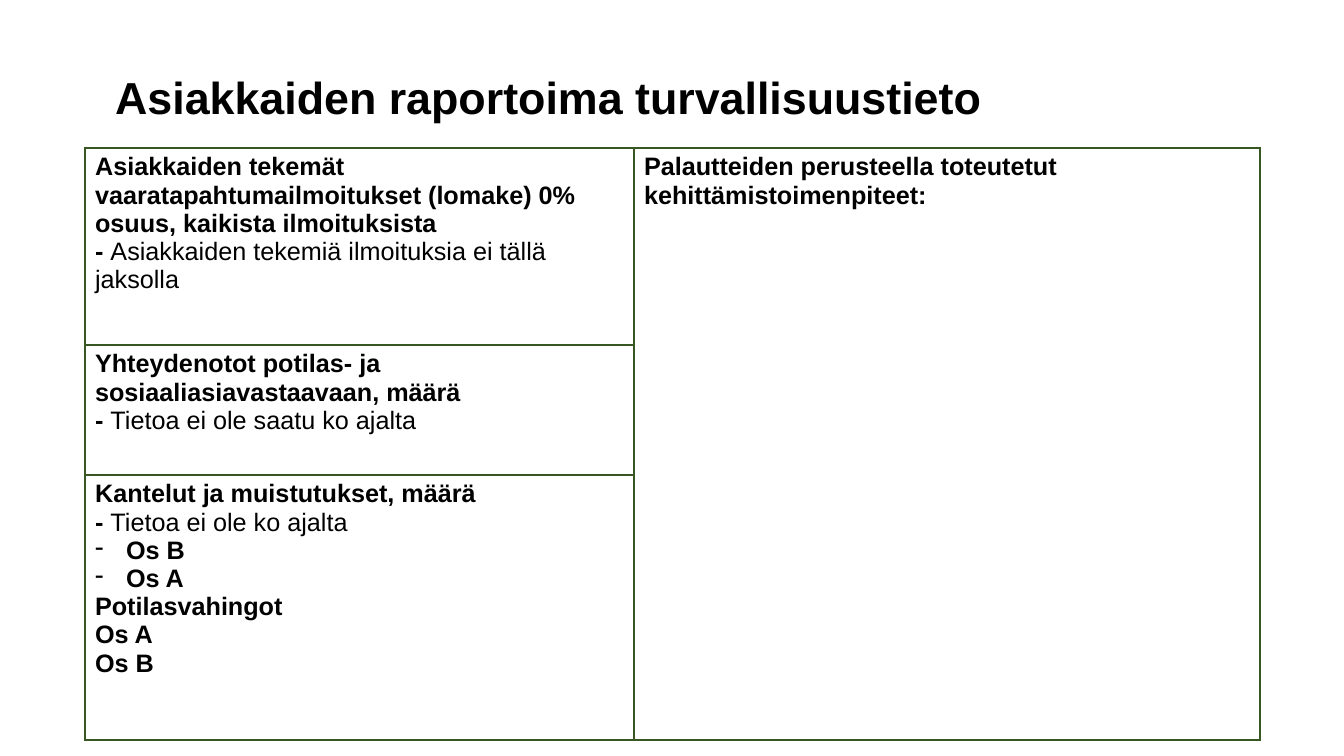
"""Build the slide on safety information reported by clients."""
from lxml import etree
from pptx import Presentation
from pptx import util as u
from pptx.dml import color
from pptx.enum import text
from pptx.oxml import ns

TITLE = "Asiakkaiden raportoima turvallisuustieto"
REPORTS = [
    [("Asiakkaiden tekemät vaaratapahtumailmoitukset (lomake) 0% osuus, kaikista ilmoituksista", ""),
     ("- ", "Asiakkaiden tekemiä ilmoituksia ei tällä jaksolla")],
    [("Yhteydenotot potilas- ja sosiaaliasiavastaavaan, määrä", ""),
     ("- ", "Tietoa ei ole saatu ko ajalta")],
    [("Kantelut ja muistutukset, määrä", ""),
     ("- ", "Tietoa ei ole ko ajalta"),
     ("• Os B", ""),
     ("• Os A", ""),
     ("Potilasvahingot", ""),
     ("Os A", ""),
     ("Os B", "")],
]
ACTIONS = [("Palautteiden perusteella toteutetut kehittämistoimenpiteet:", "")]

TITLE_BOX = (105, 27, 1019, 146)
TABLE_LEFT, TABLE_TOP = 85, 148
COLUMNS = [549, 626]
ROWS = [197, 130, 265]
INDENT = 31
BLACK, WHITE, GREEN = "000000", "FFFFFF", "385723"


def px(length):
    return u.Emu(round(length * 914400 / 100.8))


def rgb(value):
    return color.RGBColor.from_string(value)


def add_span(para, words, size=18, bold=True):
    span = para.add_run()
    span.text = words
    span.font.name = "Arial"
    span.font.size = u.Pt(size)
    span.font.bold = bold
    span.font.color.rgb = rgb(BLACK)


def add_dash(para):
    properties = para._p.get_or_add_pPr()
    properties.set("marL", str(px(INDENT)))
    properties.set("indent", str(-px(INDENT)))
    etree.SubElement(properties, ns.qn("a:buFontTx"))
    etree.SubElement(properties, ns.qn("a:buChar")).set("char", "-")


def fill_cell(cell, lines):
    for index, (strong, plain) in enumerate(lines):
        frame = cell.text_frame
        para = frame.add_paragraph() if index else frame.paragraphs[0]
        if strong.startswith("• "):
            add_dash(para)
        add_span(para, strong.removeprefix("• "))
        if plain:
            add_span(para, plain, bold=False)


def style_cell(cell):
    cell.fill.solid()
    cell.fill.fore_color.rgb = rgb(WHITE)
    properties = cell._tc.get_or_add_tcPr()
    for index, side in enumerate("LRTB"):
        line = etree.Element(ns.qn(f"a:ln{side}"), w=str(u.Pt(1)))
        fill = etree.SubElement(line, ns.qn("a:solidFill"))
        etree.SubElement(fill, ns.qn("a:srgbClr")).set("val", GREEN)
        properties.insert(index, line)


def add_title(page):
    title = page.shapes.title
    title.left, title.top, title.width, title.height = map(px, TITLE_BOX)
    title.text_frame.vertical_anchor = text.MSO_ANCHOR.MIDDLE
    para = title.text_frame.paragraphs[0]
    para.alignment = text.PP_ALIGN.LEFT
    para.line_spacing = 0.9
    add_span(para, TITLE, size=32)


def add_report_table(page):
    table = page.shapes.add_table(
        len(ROWS), len(COLUMNS), px(TABLE_LEFT), px(TABLE_TOP),
        px(sum(COLUMNS)), px(sum(ROWS))).table
    table.first_row = table.horz_banding = False
    for column, width in zip(table.columns, COLUMNS):
        column.width = px(width)
    for row, height in zip(table.rows, ROWS):
        row.height = px(height)
    for cell in table.iter_cells():
        style_cell(cell)
    table.cell(0, 1).merge(table.cell(len(ROWS) - 1, 1))
    fill_cell(table.cell(0, 1), ACTIONS)
    for index, lines in enumerate(REPORTS):
        fill_cell(table.cell(index, 0), lines)


def main():
    deck = Presentation()
    deck.slide_width, deck.slide_height = px(1344), px(756)
    page = deck.slides.add_slide(deck.slide_layouts[5])
    add_title(page)
    add_report_table(page)
    deck.save("out.pptx")


if __name__ == "__main__":
    main()
